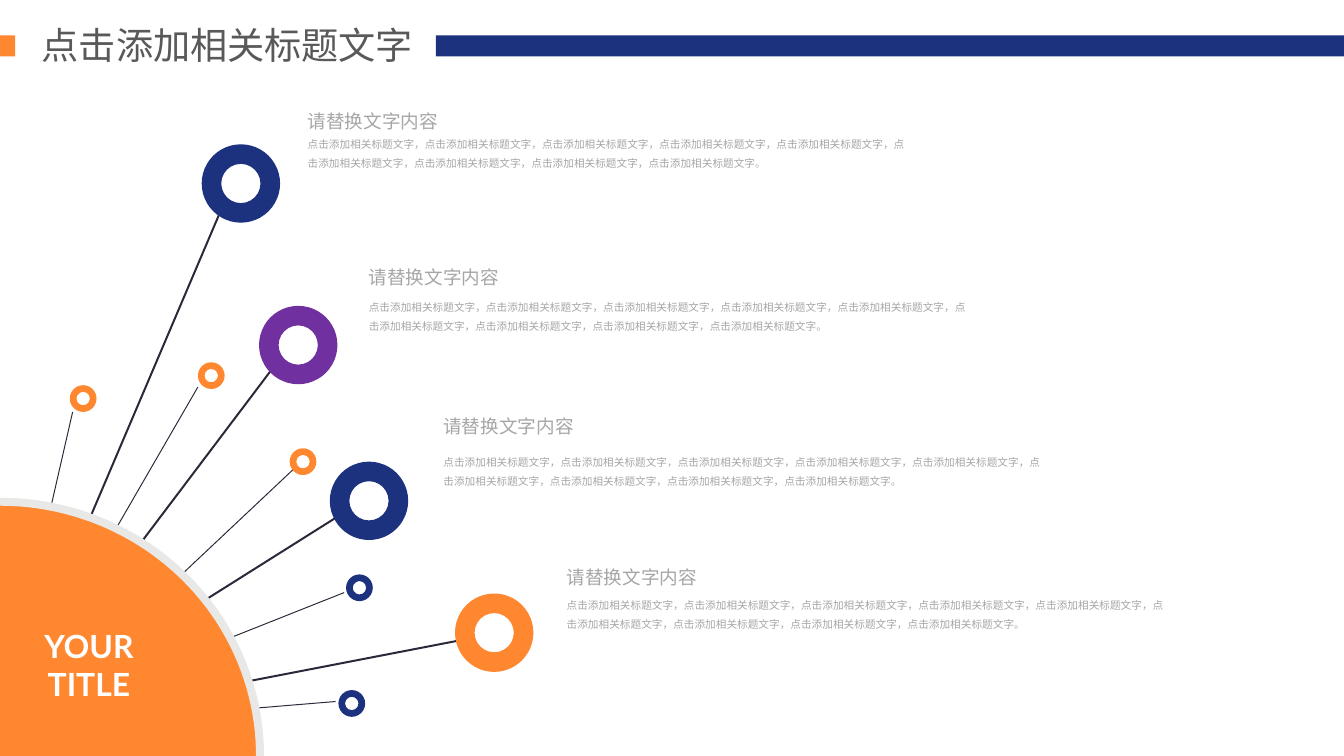
from math import cos, pi, sin

from lxml.etree import SubElement
from pptx import Presentation
from pptx.dml.color import RGBColor
from pptx.enum.shapes import MSO_CONNECTOR, MSO_SHAPE
from pptx.enum.text import PP_ALIGN
from pptx.oxml.ns import qn
from pptx.util import Inches, Pt

COLORS = {
    "navy": "1C327F", "orange": "FF872F", "purple": "7030A0", "spoke": "2B2939",
    "rim": "E8E8E6", "title": "595959", "text": "A6A6A6", "white": "FFFFFF",
}
WIDTH, HEIGHT = 14.06, 7.91
CJK_FONT = "Noto Sans CJK SC"
HUB = (0, 7.63)
LOW_HUB = (0, 7.8)
LARGE, SMALL = (0.82, 1.5), (0.28, 0.75)
NODES = [
    ((3.68, 7.36), (3.51, 7.34), HUB, SMALL, "navy"),
    ((0.87, 4.17), (0.76, 4.31), HUB, SMALL, "orange"),
    ((2.21, 3.93), (2.07, 4.05), HUB, SMALL, "orange"),
    ((3.76, 6.15), (3.6, 6.2), HUB, SMALL, "navy"),
    ((3.17, 4.83), (3.08, 4.9), LOW_HUB, SMALL, "orange"),
    ((2.52, 1.92), (2.32, 2.18), HUB, LARGE, "navy"),
    ((3.12, 3.61), (2.87, 3.83), HUB, LARGE, "purple"),
    ((3.86, 5.24), (3.54, 5.4), HUB, LARGE, "navy"),
    ((5.17, 6.62), (4.81, 6.7), HUB, LARGE, "orange"),
]
ENTRIES = [
    (3.12, 1.05, 0.28, 1.2),
    (3.76, 2.69, 0.34, 1.2),
    (4.54, 4.29, 0.36, 1.0),
    (5.83, 5.83, 0.32, 1.2),
]
HEADING = "请替换文字内容"
BODY = "，".join(["点击添加相关标题文字"] * 9) + "。"


def color(name):
    """Return the named palette colour."""
    return RGBColor.from_string(COLORS[name])


def paint(shape, fill):
    """Give a shape a flat fill with no outline or shadow."""
    shape.shadow.inherit = False
    shape.fill.solid()
    shape.fill.fore_color.rgb = color(fill)
    shape.line.fill.background()


def add_text(page, text, left, top, width, height, size=8, font=CJK_FONT,
             fill="text", bold=False, align=PP_ALIGN.LEFT, spacing=1.0, wrap=True):
    """Add a formatted text box."""
    box = page.shapes.add_textbox(Inches(left), Inches(top), Inches(width), Inches(height))
    box.text_frame.word_wrap = wrap
    para = box.text_frame.paragraphs[0]
    para.alignment = align
    para.line_spacing = spacing
    span = para.add_run()
    span.text = text
    span.font.size = Pt(size)
    span.font.bold = bold
    span.font.color.rgb = color(fill)
    span.font.name = font
    SubElement(span.font._element, qn("a:ea")).set("typeface", CJK_FONT)


def add_header(page, left, top, width):
    """Place the slide title between its two colour bars."""
    for bar_left, bar_width, fill in [(left, 0.16, "orange"), (left + 4.56, width - 4.56, "navy")]:
        bar = page.shapes.add_shape(
            MSO_SHAPE.RECTANGLE, Inches(bar_left), Inches(top + 0.19), Inches(bar_width), Inches(0.22))
        paint(bar, fill)
    add_text(page, "点击添加相关标题文字", left + 0.34, top, 4.13, 0.57,
             size=28, fill="title", wrap=False)


def add_spoke(page, tip, hub, weight):
    """Draw a straight spoke from its tip to the hub."""
    spoke = page.shapes.add_connector(
        MSO_CONNECTOR.STRAIGHT, *[Inches(value) for value in (*tip, *hub)])
    spoke.line.color.rgb = color("spoke")
    spoke.line.width = Pt(weight)
    SubElement(spoke._element.spPr, qn("a:effectLst"))


def add_ring(page, center, size, fill):
    """Draw a ring whose hole is half its diameter."""
    left, top = [Inches(value - size / 2) for value in center]
    ring = page.shapes.add_shape(MSO_SHAPE.DONUT, left, top, Inches(size), Inches(size))
    ring.adjustments[0] = 0.25
    paint(ring, fill)


def add_hub(page, left, top, width, height):
    """Draw the quarter disc with its rim and label."""
    steps = 90
    angles = [pi / 2 * step / steps for step in range(steps + 1)]
    arc = [(Inches(left + width * sin(angle)), Inches(top + height - height * cos(angle)))
           for angle in angles]
    corner = (Inches(left), Inches(top + height))

    disc = page.shapes.build_freeform(*arc[0])
    disc.add_line_segments(arc[1:] + [corner], close=True)
    paint(disc.convert_to_shape(), "orange")

    edge = page.shapes.build_freeform(*arc[0])
    edge.add_line_segments(arc[1:], close=False)
    rim = edge.convert_to_shape()
    rim.shadow.inherit = False
    rim.fill.background()
    rim.line.color.rgb = color("rim")
    rim.line.width = Pt(6)

    add_text(page, "YOUR TITLE", left + 0.12, top + 1.26, 1.62, 0.91, size=24,
             font="Lato", fill="white", bold=True, align=PP_ALIGN.CENTER)


def add_entry(page, left, top, gap, spacing):
    """Place a heading with its body text below."""
    add_text(page, BODY, left, top + gap, 6.51, 0.5, spacing=1.5)
    add_text(page, HEADING, left, top, 2.66, 0.39, size=14, font="Arial", spacing=spacing)


def main():
    """Build and save the slide."""
    deck = Presentation()
    deck.slide_width, deck.slide_height = Inches(WIDTH), Inches(HEIGHT)
    page = deck.slides.add_slide(deck.slide_layouts[6])
    add_header(page, 0, 0.18, WIDTH)
    for _, tip, hub, (_, weight), _ in NODES:
        add_spoke(page, tip, hub, weight)
    add_hub(page, 0, 5.25, 2.72, 2.66)
    for center, _, _, (size, _), fill in NODES:
        add_ring(page, center, size, fill)
    for entry in ENTRIES:
        add_entry(page, *entry)
    deck.save("out.pptx")


if __name__ == "__main__":
    main()
